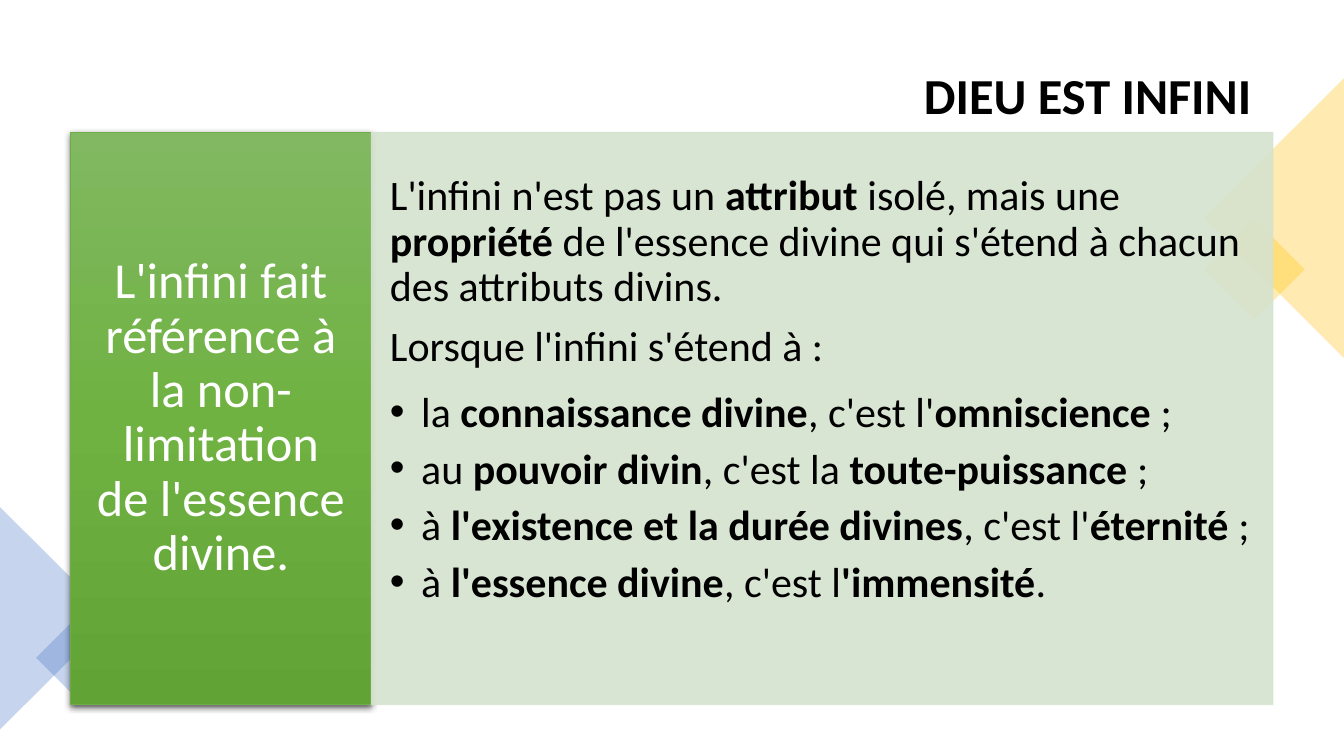
from lxml.etree import SubElement
from pptx import Presentation
from pptx.dml.color import RGBColor
from pptx.enum.shapes import MSO_SHAPE as Shape
from pptx.enum.text import MSO_ANCHOR as Anchor, MSO_AUTO_SIZE as AutoSize, PP_ALIGN as Align
from pptx.oxml.ns import qn
from pptx.util import Cm, Pt

COLORS = {
    "text": "000000", "white": "FFFFFF", "yellow": "FFC000", "blue": "4472C4",
    "green_top": "81B861", "green_mid": "6FB242", "green_end": "62A336",
    "green_line": "70AD47", "pale_green": "D5E3CF",
}
FONT = "Calibri"
TITLE = "DIEU EST INFINI"
DEFINITION = "L'infini fait référence à la non-limitation de l'essence divine."
# Asterisks enclose the bold words
STATEMENTS = [
    "L'infini n'est pas un *attribut* isolé, mais une *propriété* "
    "de l'essence divine qui s'étend à chacun des attributs divins.",
    "Lorsque l'infini s'étend à :",
]
EXTENSIONS = [
    "la *connaissance divine*, c'est l'*omniscience* ;",
    "au *pouvoir divin*, c'est la *toute-puissance* ;",
    "à *l'existence et la durée divines*, c'est l'*éternité* ;",
    "à *l'essence divine*, c'est l*'immensité*.",
]


def rgb(name):
    return RGBColor.from_string(COLORS[name])


def set_alpha(fill_parent, percent):
    color = fill_parent.find(qn("a:solidFill"))[0]
    SubElement(color, qn("a:alpha"), val=str(percent * 1000))


def add_filled(slide, kind, box, color, opacity):
    shape = slide.shapes.add_shape(kind, *map(Cm, box))
    shape.shadow.inherit = False
    shape.fill.solid()
    shape.fill.fore_color.rgb = rgb(color)
    set_alpha(shape._element.spPr, opacity)
    shape.line.fill.background()
    return shape


def set_outline(shape, color):
    shape.line.color.rgb = rgb(color)
    shape.line.width = Pt(0.5)


def prepare_frame(shape, anchor, margin_x, margin_y):
    frame = shape.text_frame
    frame.word_wrap = True
    frame.auto_size = AutoSize.NONE
    frame.vertical_anchor = anchor
    frame.margin_left = frame.margin_right = Cm(margin_x)
    frame.margin_top = frame.margin_bottom = Cm(margin_y)
    return frame


def format_run(run, size, color, bold=False):
    run.font.name = FONT
    run.font.size = Pt(size)
    run.font.bold = bold
    run.font.color.rgb = rgb(color)


def add_title(slide, box):
    title = slide.shapes.title
    title.left, title.top, title.width, title.height = map(Cm, box)
    frame = prepare_frame(title, Anchor.MIDDLE, 0.54, 0.13)
    frame.text = TITLE
    heading = frame.paragraphs[0]
    heading.alignment = Align.RIGHT
    heading.line_spacing = 0.9
    format_run(heading.runs[0], 36, "text", bold=True)


def add_corner(slide, color, triangle_box, turn, square_box):
    triangle = add_filled(slide, Shape.ISOSCELES_TRIANGLE, triangle_box, color, 30)
    triangle.rotation = turn
    square = add_filled(slide, Shape.RECTANGLE, square_box, color, 30)
    square.rotation = 45


def add_definition(slide, box):
    panel = add_filled(slide, Shape.RECTANGLE, box, "green_mid", 100)
    set_outline(panel, "green_line")

    # Vertical gradient with three stops
    panel.fill.gradient()
    panel.fill.gradient_angle = 270
    properties = panel._element.spPr
    stops = properties.find(qn("a:gradFill")).find(qn("a:gsLst"))
    for stop in list(stops):
        stops.remove(stop)
    for position, color in ((0, "green_top"), (50, "green_mid"), (100, "green_end")):
        stop = SubElement(stops, qn("a:gs"), pos=str(position * 1000))
        SubElement(stop, qn("a:srgbClr"), val=COLORS[color])

    # Soft shadow below
    shadow = SubElement(properties.find(qn("a:effectLst")), qn("a:outerShdw"),
                        blurRad=str(Pt(4.5)), dist=str(Pt(1.5)), dir="5400000",
                        algn="ctr", rotWithShape="0")
    shade = SubElement(shadow, qn("a:srgbClr"), val=COLORS["text"])
    SubElement(shade, qn("a:alpha"), val="63000")

    frame = prepare_frame(panel, Anchor.MIDDLE, 0.53, 0.71)
    frame.text = DEFINITION
    definition = frame.paragraphs[0]
    definition.alignment = Align.CENTER
    definition.line_spacing = 0.9
    definition.space_after = Pt(12.6)
    format_run(definition.runs[0], 36, "white")


def write_marked(paragraph, marked):
    paragraph.alignment = Align.LEFT
    for index, words in enumerate(marked.split("*")):
        run = paragraph.add_run()
        run.text = words
        format_run(run, 30, "text", bold=index % 2 == 1)


def add_bullet(paragraph):
    properties = paragraph._p.get_or_add_pPr()
    properties.set("marL", str(Cm(0.79)))
    properties.set("indent", str(Cm(-0.79)))
    SubElement(properties, qn("a:buFont"), typeface="Arial")
    SubElement(properties, qn("a:buChar"), char="•")


def add_explanation(slide, box):
    panel = add_filled(slide, Shape.RECTANGLE, box, "pale_green", 90)
    set_outline(panel, "pale_green")
    set_alpha(panel._element.spPr.find(qn("a:ln")), 90)
    frame = prepare_frame(panel, Anchor.TOP, 0.47, 1.07)
    for index, marked in enumerate(STATEMENTS + EXTENSIONS):
        paragraph = frame.add_paragraph() if index else frame.paragraphs[0]
        write_marked(paragraph, marked)
        if index < len(STATEMENTS):
            paragraph.line_spacing = 0.9
            paragraph.space_after = Pt(10.5)
        else:
            paragraph.space_after = Pt(4.5)
            add_bullet(paragraph)


def add_panels(slide, box):
    left, top, width, height = box
    side = width / 4
    add_definition(slide, (left, top, side, height))
    add_explanation(slide, (left + side, top, width - side, height))


def main():
    deck = Presentation()
    deck.slide_width, deck.slide_height = Cm(33.87), Cm(19.05)
    slide = deck.slides.add_slide(deck.slide_layouts[5])
    left, width = 1.78, 30.3
    add_title(slide, (left, 0.89, width, 3.15))
    add_corner(slide, "yellow", (28.58, 3.73, 7.04, 3.53), 270, (30.71, 5.89, 1.8, 1.8))
    add_corner(slide, "blue", (-1.4, 14.17, 5.61, 2.82), 90, (1.19, 15.9, 1.35, 1.35))
    add_panels(slide, (left, 3.33, width, 14.43))
    deck.save("out.pptx")


if __name__ == "__main__":
    main()
